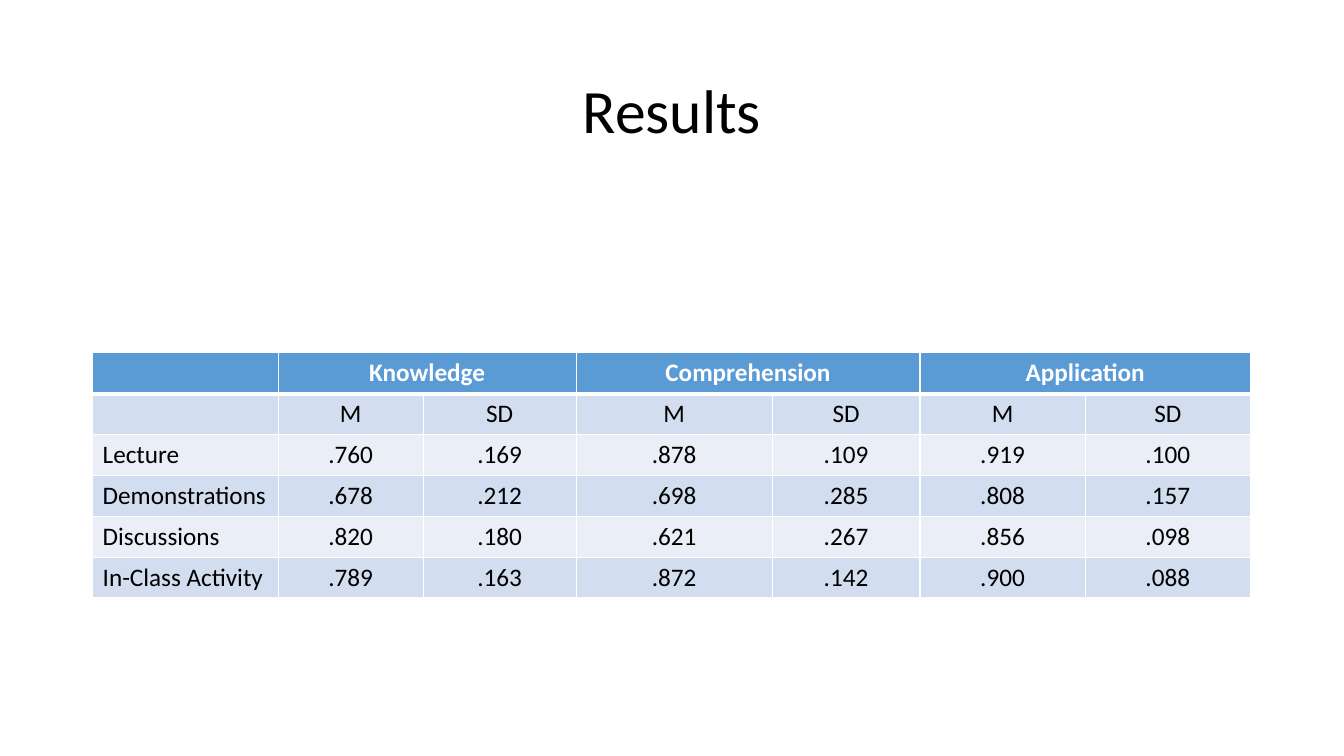
from dataclasses import dataclass

from lxml import etree
from pptx import Presentation
from pptx import util as u
from pptx.dml.color import RGBColor
from pptx.enum import text
from pptx.oxml.ns import qn


@dataclass(frozen=True)
class Theme:
    font: str = "Calibri"
    title_size: float = 44
    table_size: float = 18
    ink: str = "000000"
    white: str = "FFFFFF"
    header: str = "5B9BD5"
    bands: tuple = ("D2DEEF", "EAEFF7")
    border: float = 1
    header_border: float = 3


MEASURES = ["Knowledge", "Comprehension", "Application"]
RESULTS = [
    ["Lecture", ".760", ".169", ".878", ".109", ".919", ".100"],
    ["Demonstrations", ".678", ".212", ".698", ".285", ".808", ".157"],
    ["Discussions", ".820", ".180", ".621", ".267", ".856", ".098"],
    ["In-Class Activity", ".789", ".163", ".872", ".142", ".900", ".088"],
]
COLUMN_WIDTHS = [132.5, 103.6, 109.3, 140, 105.6, 118, 118.2]
ROW_HEIGHT = 29.2


class SlideBuilder:
    def __init__(self, prs, theme):
        self.theme = theme
        self.slide = prs.slides.add_slide(prs.slide_layouts[5])

    def add_text(self, tf, words, size, color, align, bold=False):
        p = tf.paragraphs[0]
        p.alignment = align
        r = p.add_run()
        r.text = words
        style = {"name": self.theme.font, "size": u.Pt(size), "bold": bold}
        for name, value in style.items():
            setattr(r.font, name, value)
        r.font.color.rgb = RGBColor.from_string(color)
        return p

    def title(self, words, left, top, width, height):
        sp = self.slide.shapes.title
        box = {"left": left, "top": top, "width": width, "height": height}
        for name, value in box.items():
            setattr(sp, name, u.Pt(value))
        sp.text_frame.vertical_anchor = text.MSO_ANCHOR.MIDDLE
        p = self.add_text(sp.text_frame, words, self.theme.title_size,
                          self.theme.ink, text.PP_ALIGN.CENTER)
        p.line_spacing = 0.9

    def borders(self, cell, **widths):
        """Draw white cell edges; keys are L, R, T and B in schema order."""
        tc_pr = cell._tc.get_or_add_tcPr()
        for i, (side, width) in enumerate(widths.items()):
            ln = etree.Element(qn(f"a:ln{side}"), w=str(u.Pt(width)))
            fill = etree.SubElement(ln, qn("a:solidFill"))
            etree.SubElement(fill, qn("a:srgbClr"), val=self.theme.white)
            tc_pr.insert(i, ln)

    def cell(self, cell, words, row, column):
        t = self.theme
        is_header = row == 0
        color = t.header if is_header else t.bands[(row - 1) % 2]
        cell.fill.solid()
        cell.fill.fore_color.rgb = RGBColor.from_string(color)
        self.borders(cell, L=t.border, R=t.border,
                     T=t.header_border if row == 1 else t.border,
                     B=t.header_border if is_header else t.border)
        if words:
            align = text.PP_ALIGN.CENTER if column else text.PP_ALIGN.LEFT
            self.add_text(cell.text_frame, words, t.table_size,
                          t.white if is_header else t.ink, align, is_header)

    def table(self, rows, left, top, widths, row_height):
        """Add a table whose header cells each span two columns after the first."""
        frame = self.slide.shapes.add_table(
            len(rows), len(widths), u.Pt(left), u.Pt(top),
            u.Pt(sum(widths)), u.Pt(row_height * len(rows)))
        table = frame.table
        for column, width in zip(table.columns, widths):
            column.width = u.Pt(width)
        for i, row in enumerate(rows):
            table.rows[i].height = u.Pt(row_height)
            for j, words in enumerate(row):
                self.cell(table.cell(i, j), words, i, j)
        for j in range(1, len(widths), 2):
            table.cell(0, j).merge(table.cell(0, j + 1))


def main():
    prs = Presentation()
    prs.slide_width, prs.slide_height = u.Pt(960), u.Pt(540)
    page = SlideBuilder(prs, Theme())
    page.title("Results", 66, 28.75, 828, 104.4)
    header = [""]
    for measure in MEASURES:
        header += [measure, ""]
    subheader = [""] + ["M", "SD"] * len(MEASURES)
    page.table([header, subheader] + RESULTS, 66.2, 252, COLUMN_WIDTHS, ROW_HEIGHT)
    prs.save("out.pptx")


if __name__ == "__main__":
    main()
